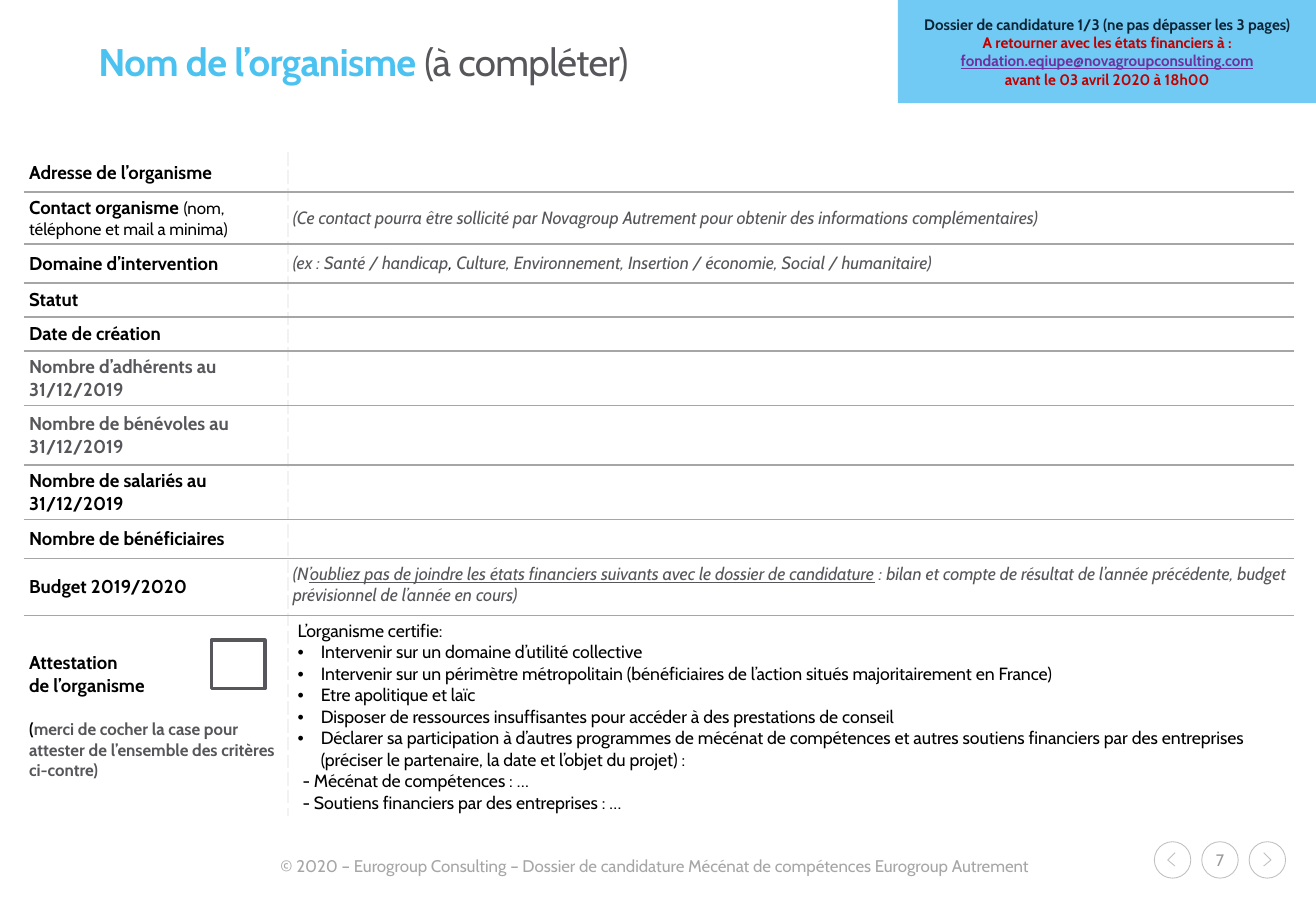
from dataclasses import dataclass, field

from lxml.etree import SubElement
from pptx import Presentation
from pptx.dml.color import RGBColor
from pptx.enum.shapes import MSO_SHAPE
from pptx.enum.text import MSO_ANCHOR, MSO_AUTO_SIZE, PP_ALIGN
from pptx.oxml.ns import qn
from pptx.util import Inches, Pt

FONT = "Cabin"
COLORS = {
    "black": "000000", "white": "FFFFFF", "gray": "57565A", "sky": "4CC2F1",
    "banner": "71CAF3", "navy": "0C2437", "red": "C00000", "purple": "7030A0",
    "rule": "A6A6A6", "dash": "F2F2F2", "circle": "BFBFBF", "number": "9A9A9B",
}


@dataclass
class Run:
    text: str
    size: float = 11
    color: str = "black"
    bold: bool = False
    italic: bool = False
    underline: bool = False


@dataclass
class Para:
    runs: list[Run]
    bullet: bool = False
    indent: float = 0
    before: float = 0
    align: PP_ALIGN = PP_ALIGN.LEFT


@dataclass
class Row:
    height: float
    label: list[Para]
    detail: list[Para] = field(default_factory=list)
    anchor: MSO_ANCHOR = MSO_ANCHOR.MIDDLE


def rgb(name: str) -> RGBColor:
    return RGBColor.from_string(COLORS[name])


def label(text: str, color: str = "black") -> Para:
    return Para([Run(text, 11, color, bold=True)])


def hint(text: str, color: str = "gray", underline: bool = False) -> Run:
    return Run(text, 10.5, color, italic=True, underline=underline)


def criterion(text: str, bullet: bool = True, indent: float = 0.19) -> Para:
    return Para([Run(text, 10.5)], bullet, indent)


def write(tf, paras: list[Para]) -> None:
    for i, para in enumerate(paras):
        p = tf.paragraphs[0] if i == 0 else tf.add_paragraph()
        p.alignment = para.align
        if para.before:
            p.space_before = Pt(para.before)
        pPr = p._p.get_or_add_pPr()
        if para.indent:
            pPr.set("marL", str(Inches(para.indent)))
        if para.bullet:
            pPr.set("indent", str(-Inches(para.indent)))
            SubElement(pPr, qn("a:buFont"), typeface="Arial")
            SubElement(pPr, qn("a:buChar"), char="•")
        for run in para.runs:
            r = p.add_run()
            r.text = run.text
            r.font.name = FONT
            r.font.size = Pt(run.size)
            r.font.bold, r.font.italic = run.bold, run.italic
            r.font.underline = run.underline
            r.font.color.rgb = rgb(run.color)


def add_border(cell, side: str, color: str, dash: str = "solid") -> None:
    ln = SubElement(cell._tc.get_or_add_tcPr(), qn(f"a:ln{side}"), w=str(Pt(1)))
    fill = SubElement(ln, qn("a:solidFill"))
    SubElement(fill, qn("a:srgbClr"), val=COLORS[color])
    SubElement(ln, qn("a:prstDash"), val=dash)


def style(sp, fill: str | None, line: str | None, width: float = 0.5) -> None:
    sp.shadow.inherit = False
    if fill:
        sp.fill.solid()
        sp.fill.fore_color.rgb = rgb(fill)
    else:
        sp.fill.background()
    if line:
        sp.line.color.rgb = rgb(line)
        sp.line.width = Pt(width)
    else:
        sp.line.fill.background()


def add_box(s, shape: MSO_SHAPE, x: float, y: float, w: float, h: float):
    return s.shapes.add_shape(shape, Inches(x), Inches(y), Inches(w), Inches(h))


def add_line_text(s, x: float, y: float, w: float, h: float, para: Para) -> None:
    tf = s.shapes.add_textbox(Inches(x), Inches(y), Inches(w), Inches(h)).text_frame
    tf.word_wrap = False
    tf.vertical_anchor = MSO_ANCHOR.MIDDLE
    write(tf, [para])


def add_chevron(s, base: float, tip: float) -> None:
    points = [(base, 7.13), (tip, 7.08), (base, 7.02)]
    (start, *rest) = [(Inches(x), Inches(y)) for x, y in points]
    builder = s.shapes.build_freeform(*start)
    builder.add_line_segments(rest, close=False)
    style(builder.convert_to_shape(), None, "circle")


def add_form(s, rows: list[Row]) -> None:
    total = sum(row.height for row in rows)
    table = s.shapes.add_table(len(rows), 2, Inches(0.2), Inches(1.26),
                               Inches(10.44), Inches(total)).table
    table.first_row = table.horz_banding = False
    table.columns[0].width, table.columns[1].width = Inches(2.17), Inches(8.27)
    last = len(rows) - 1
    for i, row in enumerate(rows):
        table.rows[i].height = Inches(row.height)
        for j, paras in enumerate((row.label, row.detail)):
            cell = table.cell(i, j)
            cell.margin_left = cell.margin_right = Inches(0.04)
            cell.margin_top = cell.margin_bottom = Inches(0.04)
            cell.vertical_anchor = row.anchor if j else MSO_ANCHOR.MIDDLE
            add_border(cell, "L" if j else "R", "dash", "sysDash")
            if i > 0:
                add_border(cell, "T", "rule")
            if i < last:
                add_border(cell, "B", "rule")
            cell.fill.solid()
            cell.fill.fore_color.rgb = rgb("white")
            write(cell.text_frame, paras)
            if not paras:
                SubElement(cell.text_frame.paragraphs[0]._p, qn("a:endParaRPr"), sz="1000")
    table.cell(last, 1).margin_left = Inches(0.08)


ROWS = [
    Row(0.32, [label("Adresse de l’organisme")]),
    Row(0.43, [Para([Run("Contact organisme ", bold=True),
                     Run("(nom, téléphone et mail a minima)", 10)])],
        [Para([hint("(Ce contact pourra être sollicité par Novagroup Autrement pour obtenir "
                    "des informations complémentaires)")])]),
    Row(0.32, [label("Domaine d’intervention")],
        [Para([hint("(ex : Santé / handicap"), hint(", ", "black"),
               hint("Culture, Environnement, Insertion / économie, Social / humanitaire)")])]),
    Row(0.28, [label("Statut")]),
    Row(0.28, [label("Date de création")]),
    Row(0.45, [label("Nombre d’adhérents au 31/12/2019", "gray")]),
    Row(0.49, [label("Nombre de bénévoles au 31/12/2019", "gray")]),
    Row(0.45, [label("Nombre de salariés au 31/12/2019")]),
    Row(0.32, [label("Nombre de bénéficiaires")]),
    Row(0.47, [label("Budget 2019/2020")],
        [Para([hint("(N"),
               hint("’oubliez pas de joindre les états financiers suivants avec le dossier "
                    "de candidature", underline=True),
               hint(" : bilan et compte de résultat de l’année précédente, budget "
                    "prévisionnel de l’année en cours)")])], MSO_ANCHOR.TOP),
    Row(1.65, [label("Attestation"), label("de l’organisme"),
               Para([Run("(", 10, bold=True),
                     Run("merci de cocher la case pour attester de l’ensemble des critères "
                         "ci-contre)", 10, "gray", bold=True)], before=13.5)],
        [criterion("L’organisme certifie:", False, 0),
         criterion("Intervenir sur un domaine d’utilité collective"),
         criterion("Intervenir sur un périmètre métropolitain (bénéficiaires de l’action "
                   "situés majoritairement en France)"),
         criterion("Etre apolitique et laïc"),
         criterion("Disposer de ressources insuffisantes pour accéder à des prestations "
                   "de conseil"),
         criterion("Déclarer sa participation à d’autres programmes de mécénat de compétences "
                   "et autres soutiens financiers par des entreprises (préciser le partenaire, "
                   "la date et l’objet du projet) :"),
         criterion("- Mécénat de compétences : …", False, 0.04),
         criterion("- Soutiens financiers par des entreprises : …", False, 0.04)]),
]
BANNER = [
    ("Dossier de candidature 1/3 (ne pas dépasser les 3 pages)", "navy", False),
    ("A retourner avec les états financiers à :", "red", False),
    ("fondation.eqiupe@novagroupconsulting.com", "purple", True),
    ("avant le 03 avril 2020 à 18h00", "red", False),
]


def main() -> None:
    prs = Presentation()
    prs.slide_width, prs.slide_height = Inches(10.83), Inches(7.5)
    s = prs.slides.add_slide(prs.slide_layouts[5])

    title = s.shapes.title
    title.left, title.top = Inches(0.81), Inches(0.35)
    title.width, title.height = Inches(9.21), Inches(0.37)
    tf = title.text_frame
    tf.margin_left = tf.margin_right = tf.margin_top = tf.margin_bottom = 0
    tf.vertical_anchor, tf.auto_size = MSO_ANCHOR.MIDDLE, MSO_AUTO_SIZE.NONE
    write(tf, [Para([Run("Nom de l’organisme ", 22.8, "sky", bold=True),
                     Run("(à compléter)", 22.8, "gray")])])
    tf.paragraphs[0].line_spacing = 0.86
    for r in tf.paragraphs[0].runs:
        r.font._element.set("spc", "-40")

    add_line_text(s, 9.98, 6.93, 0.12, 0.3,
                  Para([Run("7", 9.8, "number")], align=PP_ALIGN.CENTER))
    for i in range(3):
        style(add_box(s, MSO_SHAPE.OVAL, 9.5 + 0.39 * i, 6.93, 0.3, 0.3), None, "circle")
    add_chevron(s, 9.67, 9.61)
    add_chevron(s, 10.4, 10.46)
    add_line_text(s, 2.21, 6.99, 6.47, 0.27, Para([Run(
        "© 2020 – Eurogroup Consulting – Dossier de candidature Mécénat de compétences "
        "Eurogroup Autrement", 10, "rule")]))

    add_form(s, ROWS)
    style(add_box(s, MSO_SHAPE.RECTANGLE, 1.74, 5.27, 0.44, 0.4), "white", "gray", 2)

    banner = add_box(s, MSO_SHAPE.RECTANGLE, 7.39, 0, 3.44, 0.85)
    style(banner, "banner", None)
    banner.text_frame.vertical_anchor = MSO_ANCHOR.MIDDLE
    write(banner.text_frame, [
        Para([Run(text, 9, color, bold=True, underline=underline)], align=PP_ALIGN.CENTER)
        for text, color, underline in BANNER])

    prs.save("out.pptx")


if __name__ == "__main__":
    main()
